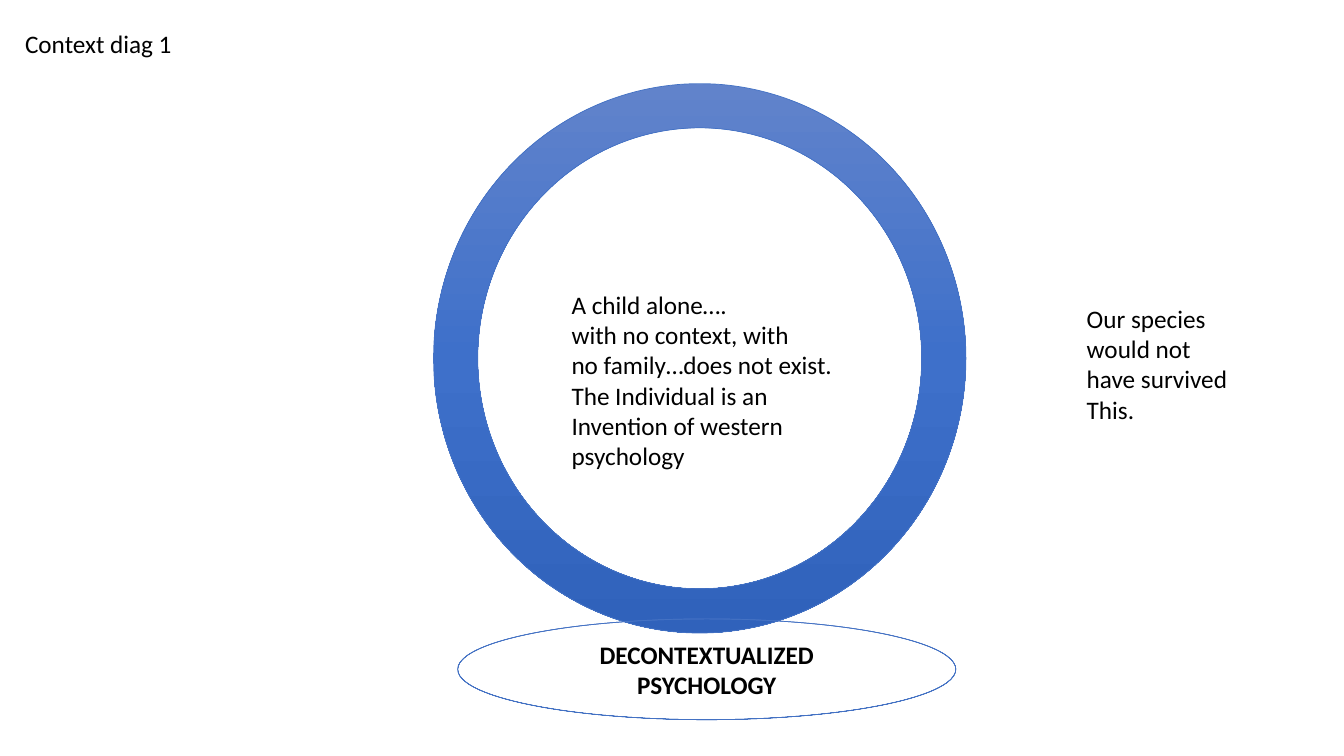
from copy import deepcopy

from pptx import Presentation
from pptx.dml.color import RGBColor
from pptx.enum.shapes import MSO_SHAPE as Shape
from pptx.enum.text import MSO_ANCHOR as Anchor, MSO_AUTO_SIZE as Fit, PP_ALIGN as Align
from pptx.oxml.ns import qn
from pptx.util import Inches, Pt

BLUES = ["6183CB", "3E70CA", "3062BB"]
EDGE = "4472C4"
INK = "000000"


def color(code):
    return RGBColor.from_string(code)


def write(frame, lines, bold=False, align=Align.LEFT):
    for i, line in enumerate(lines):
        para = frame.paragraphs[0] if i == 0 else frame.add_paragraph()
        para.alignment = align
        run = para.add_run()
        run.text = line
        run.font.name = "Calibri"
        run.font.size = Pt(18)
        run.font.bold = bold
        run.font.color.rgb = color(INK)


def shade(shape):
    """Fill from top to bottom with three even stops."""
    fill = shape.fill
    fill.gradient()
    fill.gradient_angle = 270
    stops = shape._element.spPr.find(qn("a:gradFill")).find(qn("a:gsLst"))
    stops.insert(1, deepcopy(stops[0]))
    for i, (stop, code) in enumerate(zip(fill.gradient_stops, BLUES)):
        stop.position = i / 2
        stop.color.rgb = color(code)


def ring(slide, box, hole):
    shape = slide.shapes.add_shape(Shape.DONUT, *map(Inches, box))
    shape.adjustments[0] = hole
    shape.shadow.inherit = False
    shade(shape)
    shape.line.color.rgb = color(EDGE)
    shape.line.width = Pt(0.5)
    return shape


def note(slide, box, lines, wrap=False):
    frame = slide.shapes.add_textbox(*map(Inches, box)).text_frame
    frame.word_wrap = wrap
    frame.auto_size = Fit.SHAPE_TO_FIT_TEXT
    write(frame, lines)


def diagram(slide, box):
    left, top, width, height = box
    # Large ring, and the flat ring it stands on
    ring(slide, (left, top, width, height), 0.083)
    base = ring(slide, (left + 0.24, top + height - 0.14, 4.94, 1), 0)
    base.text_frame.word_wrap = True
    base.text_frame.vertical_anchor = Anchor.MIDDLE
    write(base.text_frame, ["DECONTEXTUALIZED PSYCHOLOGY"], True, Align.CENTER)
    # Words inside the ring
    note(slide, (left + 1.27, top + 1.99, 3.45, 1.92), [
        "A child alone….",
        "with no context, with",
        "no family…does not exist.",
        "The Individual is an",
        "Invention of western",
        "psychology",
    ])


def main():
    deck = Presentation()
    deck.slide_width, deck.slide_height = Inches(13.33), Inches(7.5)
    slide = deck.slides.add_slide(deck.slide_layouts[6])
    diagram(slide, (4.3, 0.83, 5.28, 5.45))
    # Side remark and slide label
    note(slide, (10.68, 2.96, 1.9, 1.31),
         ["Our species", "would not", "have survived", "This."])
    note(slide, (0.15, 0.23, 1.75, 0.4), ["Context diag 1"], wrap=True)
    deck.save("out.pptx")


if __name__ == "__main__":
    main()
